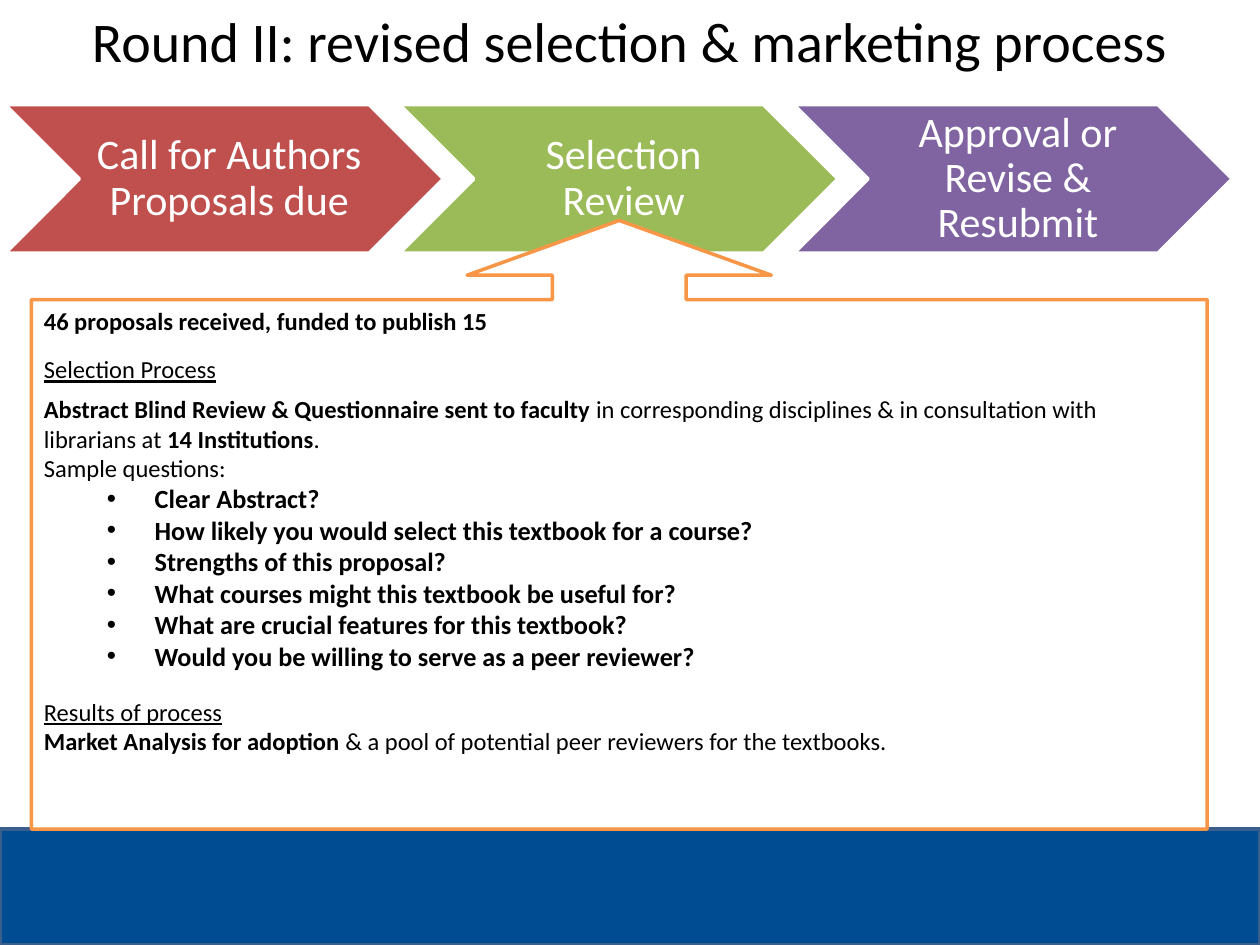
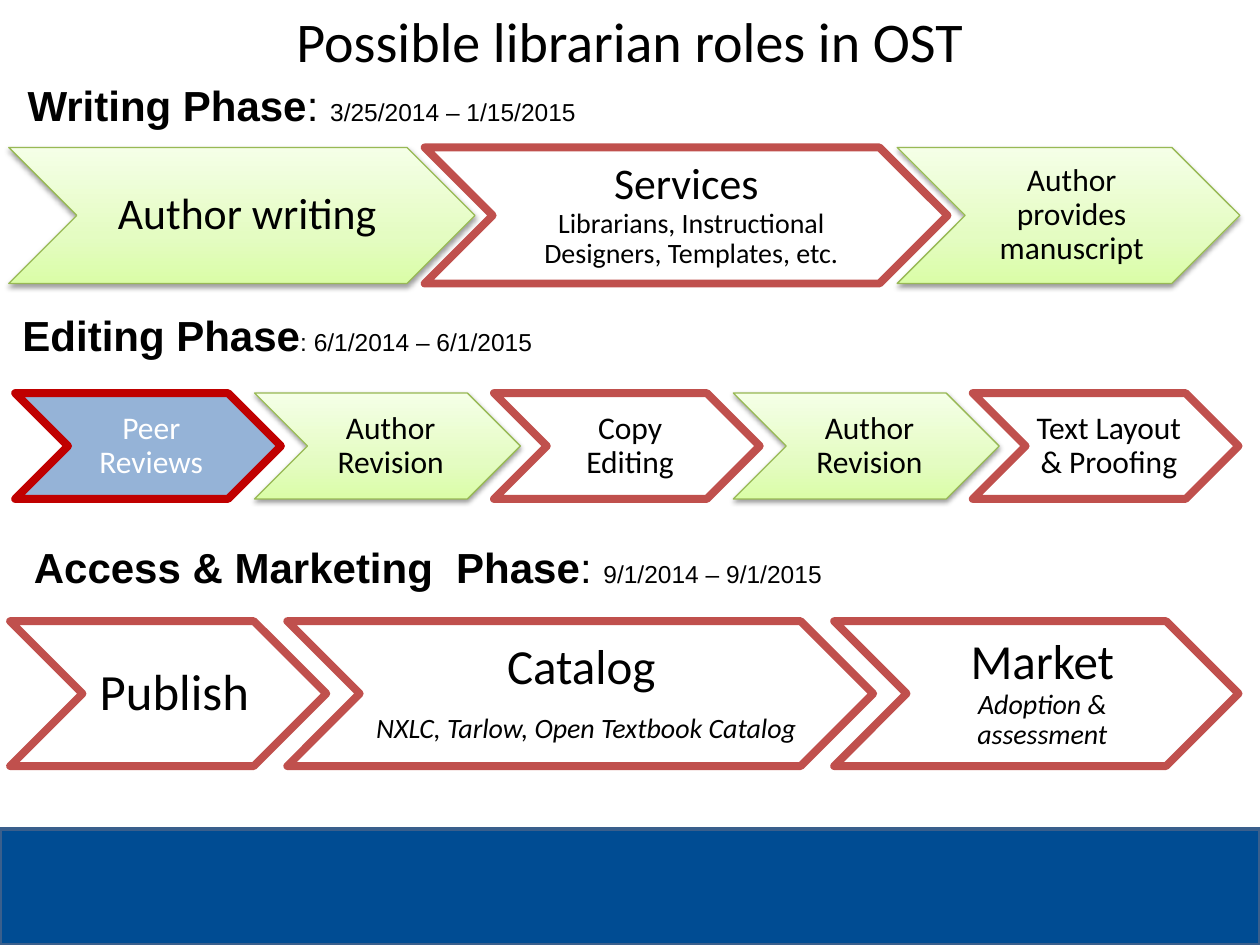
"""Build two slides on textbook selection and librarian roles."""
from copy import deepcopy
from lxml.etree import SubElement
from pptx import Presentation
from pptx.dml.color import RGBColor
from pptx.enum.shapes import MSO_SHAPE
from pptx.enum.text import MSO_ANCHOR, PP_ALIGN
from pptx.oxml import parse_xml
from pptx.oxml.ns import nsdecls, qn
from pptx.util import Inches, Pt

BLACK = RGBColor(0x00, 0x00, 0x00)
WHITE = RGBColor(0xFF, 0xFF, 0xFF)
NAVY = RGBColor(0x00, 0x4C, 0x93)
STEEL = RGBColor(0x3A, 0x5F, 0x8C)
RED = RGBColor(0xC0, 0x50, 0x4D)
DEEP = RGBColor(0xC0, 0x00, 0x00)
GREEN = RGBColor(0x9B, 0xBB, 0x59)
MOSS = RGBColor(0x98, 0xB9, 0x55)
PURPLE = RGBColor(0x80, 0x64, 0xA2)
ORANGE = RGBColor(0xF7, 0x96, 0x46)
SKY = RGBColor(0x95, 0xB3, 0xD7)
LIME = [
    (0, RGBColor(0xDA, 0xFD, 0xA7)),
    (0.35, RGBColor(0xE4, 0xFC, 0xC2)),
    (1, RGBColor(0xF5, 0xFF, 0xE7)),
]

LOOKS = {
    "call": (RED, WHITE, 2, WHITE),
    "select": (GREEN, WHITE, 2, WHITE),
    "approve": (PURPLE, WHITE, 2, WHITE),
    "author": (LIME, MOSS, 0.75, BLACK),
    "library": (WHITE, RED, 4.5, BLACK),
    "peer": (SKY, DEEP, 4.5, WHITE),
}
SHADOW = (
    f'<a:effectLst {nsdecls("a")}><a:outerShdw blurRad="39370" dist="20320" '
    'dir="5400000" rotWithShape="0"><a:srgbClr val="000000">'
    '<a:alpha val="38000"/></a:srgbClr></a:outerShdw></a:effectLst>'
)


def write(para, runs, color=BLACK, face="Calibri"):
    """Add (text, size, style) runs, where style holds letters of b, i, u."""
    for text, size, style in runs:
        if text == "\n":
            para.add_line_break()
            continue
        run = para.add_run()
        run.text = text
        font = run.font
        font.name, font.size, font.color.rgb = face, Pt(size), color
        font.bold, font.italic = "b" in style, "i" in style
        font.underline = "u" in style


def add_row(slide, left, top, height, lap, steps):
    """Add a row of chevrons, each overlapping the one before by lap."""
    for width, look, paras in steps:
        fill, edge, weight, ink = LOOKS[look]
        step = slide.shapes.add_shape(
            MSO_SHAPE.CHEVRON, Inches(left), Inches(top), Inches(width), Inches(height))
        step.line.color.rgb, step.line.width = edge, Pt(weight)
        if fill is LIME:
            step.fill.gradient()
            step.fill.gradient_angle = 90
            stops = step.element.spPr.find(".//" + qn("a:gsLst"))
            stops.insert(1, deepcopy(stops[0]))
            for stop, (place, tint) in zip(step.fill.gradient_stops, LIME):
                stop.position, stop.color.rgb = place, tint
            step.element.spPr.append(parse_xml(SHADOW))
        else:
            step.fill.solid()
            step.fill.fore_color.rgb = fill
            step.shadow.inherit = False
        frame = step.text_frame
        frame.word_wrap, frame.vertical_anchor = True, MSO_ANCHOR.MIDDLE
        frame.margin_left = Inches(0.0045 * paras[0][0][1])
        frame.margin_right = frame.margin_top = frame.margin_bottom = Inches(0.03)
        for num, runs in enumerate(paras):
            para = frame.add_paragraph() if num else frame.paragraphs[0]
            para.alignment, para.line_spacing = PP_ALIGN.CENTER, 0.9
            if num:
                para.space_before = Pt(11)
            write(para, runs, ink)
        left += width - lap


deck = Presentation()
deck.slide_width, deck.slide_height = Inches(10), Inches(7.5)
slides = []
for title in ("Round II: revised selection & marketing process",
              "Possible librarian roles in OST"):
    slide = deck.slides.add_slide(deck.slide_layouts[6])
    band = slide.shapes.add_shape(
        MSO_SHAPE.RECTANGLE, 0, Inches(6.58), Inches(10), Inches(0.92))
    band.shadow.inherit = False
    band.fill.solid()
    band.fill.fore_color.rgb = NAVY
    band.line.color.rgb, band.line.width = STEEL, Pt(2)
    head = slide.shapes.add_textbox(0, 0, Inches(10), Inches(0.83)).text_frame
    head.word_wrap = True
    head.paragraphs[0].alignment = PP_ALIGN.CENTER
    write(head.paragraphs[0], [(title, 32, "")])
    slides.append(slide)
review, roles = slides

add_row(review, 0.04, 0.83, 1.18, 0.35, [
    (3.48, "call", [[("Call for Authors Proposals due", 24, "")]]),
    (3.48, "select", [[("Selection Review", 24, "")]]),
    (3.48, "approve", [[("Approval or Revise & Resubmit", 24, "")]]),
])

note = review.shapes.add_shape(
    MSO_SHAPE.UP_ARROW_CALLOUT, Inches(0.25), Inches(1.75), Inches(9.33), Inches(4.83))
for num, value in enumerate((0.22, 0.25, 0.09, 0.87)):
    note.adjustments[num] = value
note.shadow.inherit = False
note.fill.solid()
note.fill.fore_color.rgb = WHITE
note.line.color.rgb, note.line.width = ORANGE, Pt(2)
frame = note.text_frame
frame.word_wrap, frame.vertical_anchor = True, MSO_ANCHOR.TOP
asks = [
    "Clear Abstract?",
    "How likely you would select this textbook for a course?",
    "Strengths of this proposal?",
    "What courses might this textbook be useful for?",
    "What are crucial features for this textbook?",
    "Would you be willing to serve as a peer reviewer?",
]
lines = [
    (0, [("46 proposals received, funded to publish 15", 14, "b")]),
    (11, [("Selection Process", 14, "u")]),
    (6, [("Abstract Blind Review & Questionnaire sent to faculty", 14, "b"),
         (" in corresponding disciplines & in consultation with librarians at ", 14, ""),
         ("14 Institutions", 14, "b"), (".", 14, "")]),
    (0, [("Sample questions:", 14, "")]),
    *[(0, [(ask, 15, "b")]) for ask in asks],
    (14.5, [("Results of process", 14, "u")]),
    (0, [("Market Analysis for adoption ", 14, "b"),
         ("& a pool of potential peer reviewers for the textbooks.", 14, "")]),
]
for num, (gap, runs) in enumerate(lines):
    para = frame.add_paragraph() if num else frame.paragraphs[0]
    para.alignment = PP_ALIGN.LEFT
    if gap:
        para.space_before = Pt(gap)
    if runs[0][0] in asks:
        para.level = 1
        props = para._p.get_or_add_pPr()
        props.set("marL", str(Inches(0.88)))
        props.set("indent", str(Inches(-0.38)))
        SubElement(props, qn("a:buFont")).set("typeface", "Arial")
        SubElement(props, qn("a:buChar")).set("char", "•")
    write(para, runs)

phases = [
    (0.12, 0.58, "Writing Phase", ": ", 24, "3/25/2014 – 1/15/2015"),
    (0.08, 2.41, "Editing Phase", ": ", 14, "6/1/2014 – 6/1/2015"),
    (0.17, 4.25, "Access & Marketing  Phase", ": ", 24, "9/1/2014 – 9/1/2015"),
]
for left, top, name, colon, size, dates in phases:
    label = roles.shapes.add_textbox(
        Inches(left), Inches(top), Inches(7.42), Inches(0.5)).text_frame
    label.word_wrap = True
    write(label.paragraphs[0],
          [(name, 24, "b"), (colon, size, ""), (dates, 14, "")], face="Arial")

add_row(roles, 0.07, 1.17, 1.08, 0.4, [
    (3.7, "author", [[("Author writing", 25, "")]]),
    (4.15, "library", [[
        ("Services ", 25, ""), ("\n", 25, ""),
        ("Librarians, Instructional Designers, Templates, etc.", 16, "")]]),
    (2.72, "author", [[("Author provides manuscript", 18, "")]]),
])
edits = [
    ("peer", "Peer Reviews"),
    ("author", "Author Revision"),
    ("library", "Copy Editing"),
    ("author", "Author Revision"),
    ("library", "Text Layout & Proofing"),
]
add_row(roles, 0.12, 3.12, 0.84, 0.21,
        [(2.11, look, [[(text, 18, "")]]) for look, text in edits])
add_row(roles, 0.08, 4.93, 1.15, 0.31, [
    (2.51, "library", [[("Publish", 29, "")]]),
    (4.65, "library", [
        [("Catalog", 28, ""), (" ", 25, "")],
        [("NXLC, Tarlow, Open Textbook Catalog", 16, "i")]]),
    (3.21, "library", [[
        ("Market", 28, ""), (" ", 26, ""), ("Adoption & assessment", 16, "i")]]),
])

deck.save("out.pptx")
